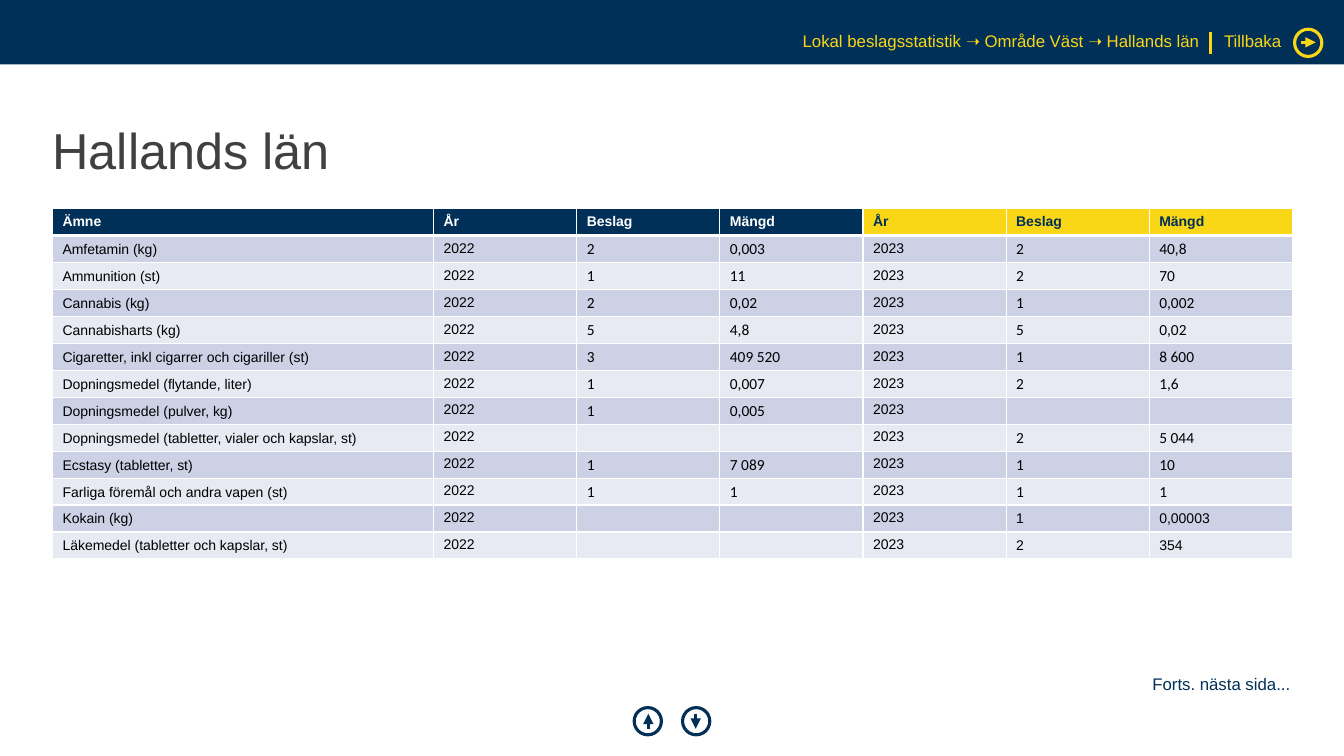
from dataclasses import dataclass
from lxml import etree
from pptx import Presentation
from pptx.dml.color import RGBColor
from pptx.enum.shapes import MSO_CONNECTOR, MSO_SHAPE
from pptx.enum.text import MSO_ANCHOR, MSO_AUTO_SIZE, PP_ALIGN
from pptx.oxml.ns import qn
from pptx.util import Inches, Pt

LEFT, RIGHT = PP_ALIGN.LEFT, PP_ALIGN.RIGHT
TOP, MIDDLE, BOTTOM = MSO_ANCHOR.TOP, MSO_ANCHOR.MIDDLE, MSO_ANCHOR.BOTTOM
STRAIGHT = MSO_CONNECTOR.STRAIGHT
RECT, OVAL = MSO_SHAPE.RECTANGLE, MSO_SHAPE.OVAL
NO_AUTOFIT = MSO_AUTO_SIZE.NONE


@dataclass(frozen=True)
class Theme:
    navy: str = "003057"
    yellow: str = "F9D616"
    gray: str = "404040"
    black: str = "000000"
    white: str = "FFFFFF"
    band_dark: str = "CCD1E6"
    band_light: str = "E7EAF3"
    font: str = "Arial"
    number_font: str = "Calibri"
    title: int = 36
    label: int = 12
    cell: int = 10
    number: int = 11


T = Theme()


def write(tf, text, size, color, align=LEFT, spacing=0.9, font=T.font, bold=False):
    tf.text = text
    p = tf.paragraphs[0]
    p.alignment = align
    p.line_spacing = spacing
    for r in p.runs:
        r.font.name = font
        r.font.size = Pt(size)
        r.font.bold = bold
        r.font.color.rgb = RGBColor.from_string(color)
    if not p.runs:
        p._p.get_or_add_endParaRPr().set("sz", str(size * 100))


def add_line(x1, y1, x2, y2, color, width, arrow=False):
    c = s.shapes.add_connector(STRAIGHT, Inches(x1), Inches(y1), Inches(x2), Inches(y2))
    c.line.color.rgb = RGBColor.from_string(color)
    c.line.width = Pt(width)
    if arrow:
        etree.SubElement(c.line._get_or_add_ln(), qn("a:tailEnd"), type="triangle")
    etree.SubElement(c._element.spPr, qn("a:effectLst"))


prs = Presentation()
prs.slide_width, prs.slide_height = Inches(13.33), Inches(7.5)
s = prs.slides.add_slide(prs.slide_layouts[5])

band = s.shapes.add_shape(RECT, 0, 0, prs.slide_width, Inches(0.64))
band.shadow.inherit = False
band.fill.solid()
band.fill.fore_color.rgb = RGBColor.from_string(T.navy)
band.line.fill.background()

title = s.shapes.title
title.left, title.top = Inches(0.52), Inches(0.79)
title.width, title.height = Inches(12.28), Inches(1.45)
tf = title.text_frame
tf.margin_left = tf.margin_top = tf.margin_right = tf.margin_bottom = 0
tf.vertical_anchor = MIDDLE
tf.auto_size = NO_AUTOFIT
write(tf, "Hallands län", T.title, T.gray)

labels = [
    ("Tillbaka", 12.14, 0.33, 1.51, T.yellow, LEFT),
    ("Lokal beslagsstatistik ➝ Område Väst ➝ Hallands län", 5.5, 0.33, 6.4, T.yellow, RIGHT),
    ("Forts. nästa sida...", 6.4, 6.71, 6.4, T.navy, RIGHT),
]
for text, x, y, w, color, align in labels:
    tf = s.shapes.add_textbox(Inches(x), Inches(y), Inches(w), Inches(0.19)).text_frame
    tf.margin_left = tf.margin_top = tf.margin_right = tf.margin_bottom = 0
    tf.word_wrap = True
    write(tf, text, T.label, color, align)

add_line(12.01, 0.32, 12.01, 0.54, T.yellow, 2.25)

buttons = [
    (12.84, 0.29, T.yellow, (12.9, 0.42, 13.05, 0.42)),
    (6.77, 7.02, T.navy, (6.9, 7.08, 6.9, 7.23)),
    (6.29, 7.02, T.navy, (6.43, 7.23, 6.43, 7.08)),
]
for x, y, color, ends in buttons:
    add_line(*ends, color, 2.5, arrow=True)
    ring = s.shapes.add_shape(OVAL, Inches(x), Inches(y), Inches(0.27), Inches(0.27))
    ring.shadow.inherit = False
    ring.fill.background()
    ring.line.color.rgb = RGBColor.from_string(color)
    ring.line.width = Pt(2.25)

header = ["Ämne"] + ["År", "Beslag", "Mängd"] * 2
seizures = [
    ("Amfetamin (kg)", "2", "0,003", "2", "40,8"),
    ("Ammunition (st)", "1", "11", "2", "70"),
    ("Cannabis (kg)", "2", "0,02", "1", "0,002"),
    ("Cannabisharts (kg)", "5", "4,8", "5", "0,02"),
    ("Cigaretter, inkl cigarrer och cigariller (st)", "3", "409 520", "1", "8 600"),
    ("Dopningsmedel (flytande, liter)", "1", "0,007", "2", "1,6"),
    ("Dopningsmedel (pulver, kg)", "1", "0,005", "", ""),
    ("Dopningsmedel (tabletter, vialer och kapslar, st)", "", "", "2", "5 044"),
    ("Ecstasy (tabletter, st)", "1", "7 089", "1", "10"),
    ("Farliga föremål och andra vapen (st)", "1", "1", "1", "1"),
    ("Kokain (kg)", "", "", "1", "0,00003"),
    ("Läkemedel (tabletter och kapslar, st)", "", "", "2", "354"),
]
rows = [header] + [[name, "2022", n1, q1, "2023", n2, q2] for name, n1, q1, n2, q2 in seizures]
arial_rows = (11, 12)

table = s.shapes.add_table(len(rows), len(header), Inches(0.52), Inches(2.07),
                           Inches(12.28), Inches(0.24 * len(rows))).table
for j, col in enumerate(table.columns):
    col.width = Inches(1.42 if j else 3.78)
for i, values in enumerate(rows):
    table.rows[i].height = Inches(0.24)
    for j, value in enumerate(values):
        cell = table.cell(i, j)
        tcPr = cell._tc.get_or_add_tcPr()
        for side in ("L", "R", "T", "B"):
            thick = (i, side) in ((0, "B"), (1, "T"))
            ln = etree.SubElement(tcPr, qn(f"a:ln{side}"), w=str(Pt(3 if thick else 1)))
            fill = etree.SubElement(ln, qn("a:solidFill"))
            etree.SubElement(fill, qn("a:srgbClr"), val=T.white)

        size, font, color, anchor = T.cell, T.font, T.black, TOP
        if i == 0:
            back, color = (T.navy, T.white) if j < 4 else (T.yellow, T.navy)
        else:
            back = T.band_dark if i % 2 else T.band_light
            if j == 0:
                anchor = BOTTOM
            elif j not in (1, 4) and value:
                anchor = MIDDLE
                if i not in arial_rows:
                    size, font = T.number, T.number_font
                    cell.margin_top = cell.margin_right = Inches(0.01)
                    cell.margin_bottom = 0
        cell.vertical_anchor = anchor
        cell.fill.solid()
        cell.fill.fore_color.rgb = RGBColor.from_string(back)
        write(cell.text_frame, value, size, color, spacing=1.0, font=font, bold=i == 0)

prs.save("out.pptx")
